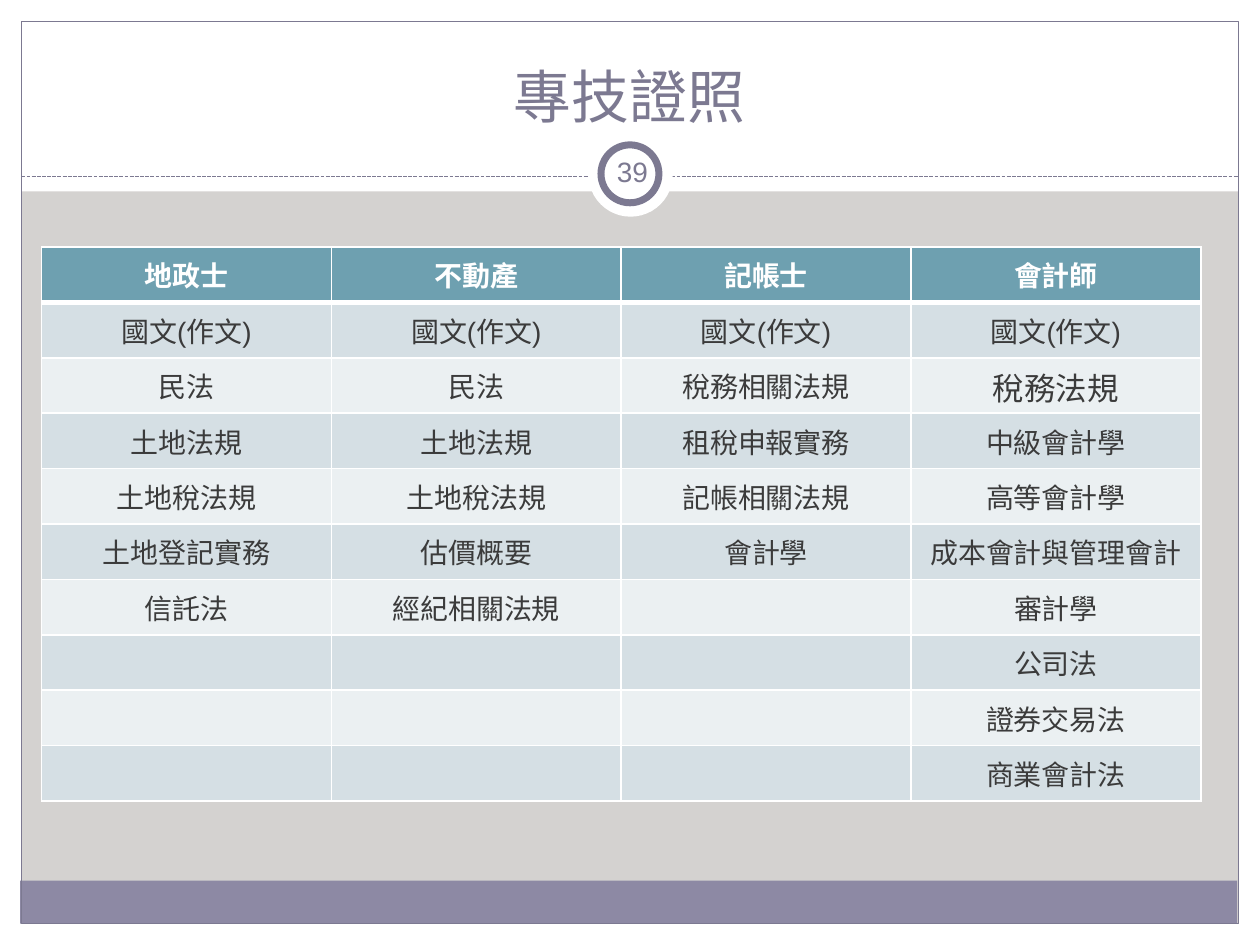
from dataclasses import dataclass
from typing import Optional

from lxml import etree
from pptx import Presentation
from pptx.dml import color
from pptx.enum import dml, shapes, text
from pptx.oxml import ns
from pptx.util import Inches, Pt

FONT = "Arial"
WHITE, PURPLE, VIOLET = "FFFFFF", "7C7991", "8D89A4"
GREY, DARK, TEAL = "D4D2D0", "3B3B3B", "6EA0B0"
BANDS = ("EBF0F2", "D5DFE4")
COLUMNS = {
    "地政士": ["國文(作文)", "民法", "土地法規", "土地稅法規", "土地登記實務", "信託法"],
    "不動產": ["國文(作文)", "民法", "土地法規", "土地稅法規", "估價概要", "經紀相關法規"],
    "記帳士": ["國文(作文)", "稅務相關法規", "租稅申報實務", "記帳相關法規", "會計學"],
    "會計師": ["國文(作文)", "稅務法規", "中級會計學", "高等會計學", "成本會計與管理會計",
            "審計學", "公司法", "證券交易法", "商業會計法"],
}
LARGE = "稅務法規"


@dataclass
class Panel:
    """A preset shape of the slide frame, in inches and points."""
    left: float
    top: float
    width: float
    height: float
    fill: Optional[str] = None
    line: Optional[str] = None
    weight: float = 0.75
    kind: shapes.MSO_SHAPE = shapes.MSO_SHAPE.RECTANGLE


PANELS = [
    Panel(0, 7.33, 10, 0.17, WHITE),
    Panel(0, 0, 10, 1.52, WHITE),
    Panel(0, 0, 0.17, 7.5, WHITE),
    Panel(9.83, 0, 0.17, 7.5, WHITE),
    Panel(0.16, 6.99, 9.66, 0.34, VIOLET),
    Panel(0.17, 0.17, 9.66, 7.16, None, PURPLE),
]
BADGE = [
    Panel(4.67, 1.05, 0.67, 0.67, WHITE, kind=shapes.MSO_SHAPE.OVAL),
    Panel(4.77, 1.15, 0.46, 0.46, WHITE, PURPLE, 4, shapes.MSO_SHAPE.OVAL),
]


def rgb(value: str) -> color.RGBColor:
    """Turn a hex string into a colour."""
    return color.RGBColor.from_string(value)


def paint(fill, value: str) -> None:
    """Give a fill one solid colour."""
    fill.solid()
    fill.fore_color.rgb = rgb(value)


def draw_panel(s, panel: Panel) -> None:
    """Draw one frame shape."""
    sp = s.shapes.add_shape(panel.kind, Inches(panel.left), Inches(panel.top),
                            Inches(panel.width), Inches(panel.height))
    sp.shadow.inherit = False
    if panel.fill:
        paint(sp.fill, panel.fill)
    else:
        sp.fill.background()
    if panel.line:
        paint(sp.line.fill, panel.line)
        sp.line.width = Pt(panel.weight)
    else:
        sp.line.fill.background()


def draw_divider(s, left: float, right: float, y: float) -> None:
    """Draw the dashed line below the title."""
    cx = s.shapes.add_connector(shapes.MSO_CONNECTOR.STRAIGHT, Inches(left), Inches(y),
                                Inches(right), Inches(y))
    paint(cx.line.fill, PURPLE)
    cx.line.width = Pt(0.75)
    cx.line.dash_style = dml.MSO_LINE.SQUARE_DOT
    etree.SubElement(cx.line._get_or_add_ln().getparent(), ns.qn("a:effectLst"))


def write(tf, words: str, size: float, hue: str, bold: bool = False) -> None:
    """Write one centred, formatted paragraph."""
    p = tf.paragraphs[0]
    p.text = words
    p.alignment = text.PP_ALIGN.CENTER
    for r in p.runs:
        r.font.name, r.font.size, r.font.bold = FONT, Pt(size), bold
        r.font.color.rgb = rgb(hue)


def draw_text(s, words: str, left: float, top: float, width: float, height: float,
              size: float, anchor: text.MSO_ANCHOR, inset: float) -> None:
    """Draw a wrapped text box in the accent colour."""
    tf = s.shapes.add_textbox(Inches(left), Inches(top), Inches(width), Inches(height)).text_frame
    tf.word_wrap = True
    tf.vertical_anchor = anchor
    tf.margin_left = tf.margin_right = Inches(inset)
    tf.margin_top = tf.margin_bottom = Inches(0.05)
    write(tf, words, size, PURPLE)


def draw_borders(cell, bottom: float) -> None:
    """Add white borders to a cell, with a chosen bottom weight."""
    tc_pr = cell._tc.get_or_add_tcPr()
    for side, weight in {"L": 1, "R": 1, "T": 1, "B": bottom}.items():
        ln = etree.SubElement(tc_pr, ns.qn(f"a:ln{side}"), w=str(Pt(weight)))
        fill = etree.SubElement(ln, ns.qn("a:solidFill"))
        etree.SubElement(fill, ns.qn("a:srgbClr"), val=WHITE)


def draw_table(s) -> None:
    """Draw the table of exam subjects for each licence."""
    count = 1 + max(map(len, COLUMNS.values()))
    table = s.shapes.add_table(count, len(COLUMNS), Inches(0.33), Inches(1.96),
                               Inches(9.2), Inches(0.44 * count)).table
    for row in table.rows:
        row.height = Inches(0.44)
    for c, (licence, subjects) in enumerate(COLUMNS.items()):
        table.columns[c].width = Inches(2.3)
        words = [licence, *subjects]
        for i in range(count):
            cell = table.cell(i, c)
            header = i == 0
            draw_borders(cell, 3 if header else 1)
            paint(cell.fill, TEAL if header else BANDS[i % 2])
            cell.vertical_anchor = text.MSO_ANCHOR.MIDDLE
            if i < len(words):
                write(cell.text_frame, words[i], 18 if words[i] == LARGE else 16,
                      WHITE if header else DARK, header)


def main() -> None:
    """Build and save the slide."""
    prs = Presentation()
    prs.slide_width, prs.slide_height = Inches(10), Inches(7.5)
    s = prs.slides.add_slide(prs.slide_layouts[6])
    paint(s.background.fill, GREY)
    for panel in PANELS:
        draw_panel(s, panel)
    draw_divider(s, 0.17, 9.83, 1.4)
    for panel in BADGE:
        draw_panel(s, panel)
    draw_text(s, "專技證照", 0.33, 0.25, 9.33, 0.83, 33, text.MSO_ANCHOR.BOTTOM, 0.1)
    draw_table(s)
    draw_text(s, "39", 4.77, 1.12, 0.5, 0.48, 16, text.MSO_ANCHOR.MIDDLE, 0.05)
    prs.save("out.pptx")


if __name__ == "__main__":
    main()
